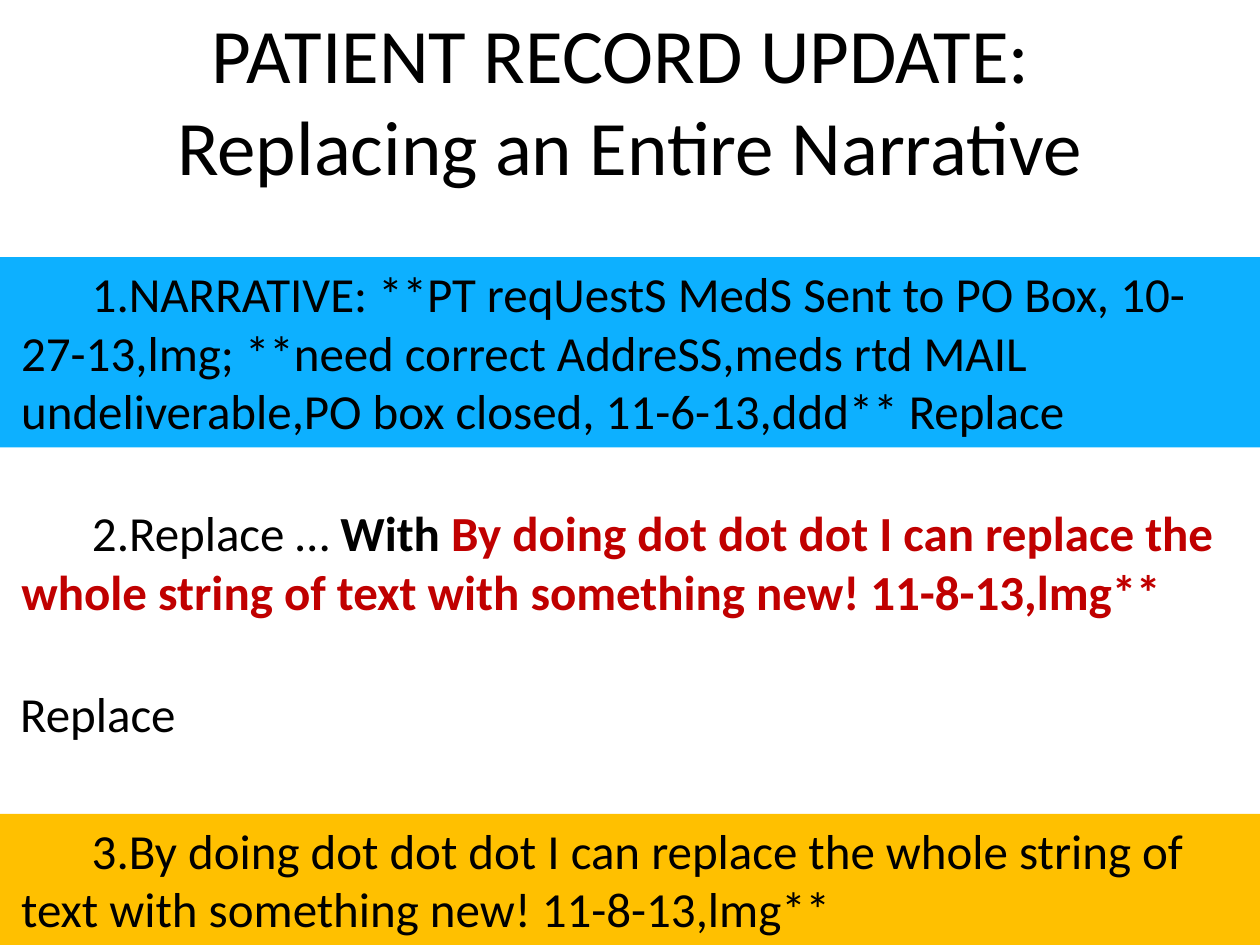
from lxml import etree
from pptx import Presentation
from pptx.dml.color import RGBColor
from pptx.enum.shapes import MSO_SHAPE
from pptx.enum.text import MSO_ANCHOR, MSO_AUTO_SIZE, PP_ALIGN
from pptx.oxml.ns import qn
from pptx.util import Inches, Pt

RECT = MSO_SHAPE.RECTANGLE
TOP = MSO_ANCHOR.TOP
NO_FIT = MSO_AUTO_SIZE.NONE
LEFT, CENTER = PP_ALIGN.LEFT, PP_ALIGN.CENTER

BLACK = RGBColor(0x00, 0x00, 0x00)
RED = RGBColor(0xC0, 0x00, 0x00)
BLUE = RGBColor(0x0D, 0xB0, 0xFF)
GOLD = RGBColor(0xFF, 0xC0, 0x00)

WIDTH, HEIGHT = Inches(10), Inches(7.5)
FONT = "Calibri"
NEW_TEXT = ("By doing dot dot dot I can replace the whole string of text "
            "with something new! 11-8-13,lmg**")


def place(sp, top, height):
    """Stretch a shape over the slide's width and prepare its text frame."""
    sp.left, sp.top, sp.width, sp.height = 0, Inches(top), WIDTH, Inches(height)
    tf = sp.text_frame
    tf.word_wrap = True
    tf.auto_size = NO_FIT
    tf.vertical_anchor = TOP
    return tf


def add_run(p, text, size=28, bold=False, color=BLACK):
    """Add a formatted run to a paragraph."""
    r = p.add_run()
    r.text = text
    r.font.name = FONT
    r.font.size = Pt(size)
    r.font.bold = bold
    r.font.color.rgb = color


def set_paragraph(p, align=LEFT, margin=0, indent=0, after=0, number=None):
    """Set alignment, indents, spacing and the optional list number."""
    p.alignment = align
    p.space_before = Pt(0)
    p.space_after = Pt(after)
    pPr = p._p.get_or_add_pPr()
    pPr.set("marL", str(Inches(margin)))
    pPr.set("indent", str(Inches(indent)))
    if number is None:
        etree.SubElement(pPr, qn("a:buNone"))
    else:
        etree.SubElement(pPr, qn("a:buFont"), typeface="+mj-lt")
        etree.SubElement(pPr, qn("a:buAutoNum"), type="arabicPeriod",
                         startAt=str(number))


def set_step(p, number, after=0):
    """Make a paragraph one numbered step."""
    set_paragraph(p, margin=0.07, indent=0.56, after=after, number=number)


def add_band(slide, top, height, color, number, text):
    """Add a full-width coloured band that holds one numbered step."""
    sp = slide.shapes.add_shape(RECT, 0, 0, WIDTH, HEIGHT)
    sp.shadow.inherit = False
    sp.fill.solid()
    sp.fill.fore_color.rgb = color
    sp.line.fill.background()
    p = place(sp, top, height).paragraphs[0]
    set_step(p, number)
    add_run(p, text)


def fill_title(slide):
    """Write the two-line title."""
    tf = place(slide.shapes.title, 0, 1.58)
    lines = ("PATIENT RECORD UPDATE: ", "Replacing an Entire Narrative")
    for i, line in enumerate(lines):
        p = tf.add_paragraph() if i else tf.paragraphs[0]
        set_paragraph(p, align=CENTER)
        add_run(p, line, size=44)


def fill_body(slide):
    """Write the replacement step and the prompt after it."""
    tf = place(slide.placeholders[1], 3.94, 2.02)
    p = tf.paragraphs[0]
    set_step(p, 2, after=36)
    add_run(p, "Replace … ")
    add_run(p, "With ", bold=True)
    add_run(p, NEW_TEXT, bold=True, color=RED)
    p = tf.add_paragraph()
    set_paragraph(p, margin=0.06)
    add_run(p, "Replace")


def main():
    """Build and save the slide."""
    prs = Presentation()
    prs.slide_width, prs.slide_height = WIDTH, HEIGHT
    slide = prs.slides.add_slide(prs.slide_layouts[1])
    fill_title(slide)
    add_band(slide, 2.04, 1.51, BLUE, 1,
             "NARRATIVE: **PT reqUestS MedS Sent to PO Box, 10-27-13,lmg; "
             "**need correct AddreSS,meds rtd MAIL undeliverable,"
             "PO box closed, 11-6-13,ddd** Replace")
    fill_body(slide)
    add_band(slide, 6.46, 1.04, GOLD, 3, NEW_TEXT)
    prs.save("out.pptx")


if __name__ == "__main__":
    main()
